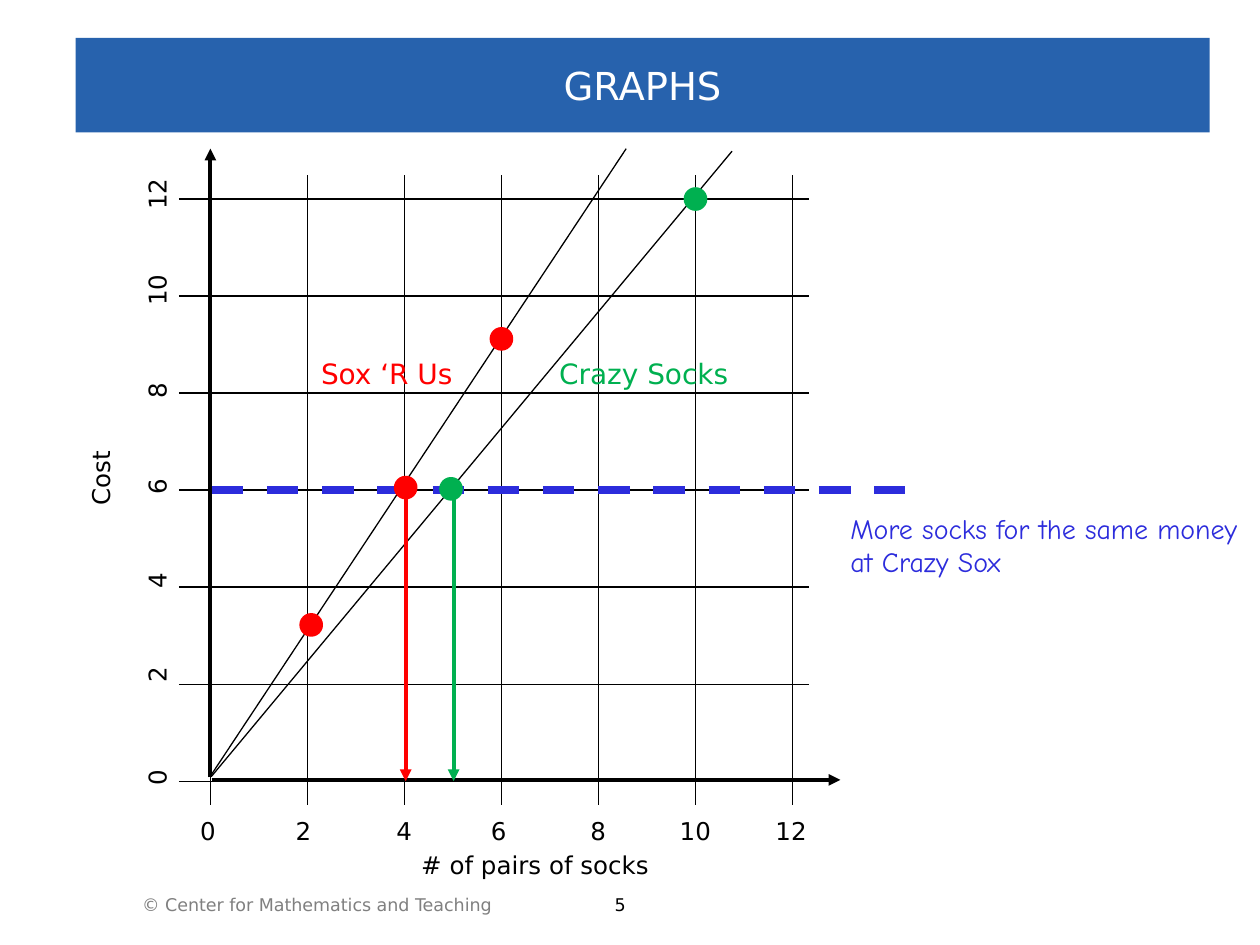
from lxml.etree import SubElement
from pptx import Presentation
from pptx.dml.color import RGBColor
from pptx.enum.dml import MSO_LINE
from pptx.enum.shapes import MSO_CONNECTOR, MSO_SHAPE
from pptx.enum.text import MSO_ANCHOR, PP_ALIGN
from pptx.oxml.ns import qn
from pptx.util import Inches, Pt

COLORS = {
    "black": "000000",
    "white": "FFFFFF",
    "gray": "808080",
    "banner": "2762AD",
    "blue": "2C2CDC",
    "red": "FF0000",
    "green": "00B050",
}
FONT = "DejaVu Sans"
STEP = 0.77           # grid spacing, two units on either axis
X0, Y0 = 1.67, 6.2    # origin of the graph
TICKS = range(0, 13, 2)
TICK_TEXT = "\t".join(str(n) for n in TICKS)


def rgb(name):
    return RGBColor.from_string(COLORS[name])


def write(tf, text, size=14, color="black", font=FONT, align=PP_ALIGN.LEFT, tabs=()):
    p = tf.paragraphs[0]
    p.alignment = align
    if tabs:
        tab_list = SubElement(p._p.get_or_add_pPr(), qn("a:tabLst"))
        for pos in tabs:
            SubElement(tab_list, qn("a:tab"), pos=str(Inches(pos)), algn="ctr")
    r = p.add_run()
    r.text = text
    r.font.size = Pt(size)
    r.font.name = font
    r.font.color.rgb = rgb(color)


def add_text(s, text, left, top, width, height, rotation=0, wrap=True, **fmt):
    sp = s.shapes.add_textbox(Inches(left), Inches(top), Inches(width), Inches(height))
    sp.rotation = rotation
    sp.text_frame.word_wrap = wrap
    write(sp.text_frame, text, **fmt)


def add_line(s, x1, y1, x2, y2, color="black", width=0.75, arrow=False, dash=None):
    c = s.shapes.add_connector(MSO_CONNECTOR.STRAIGHT, Inches(x1), Inches(y1),
                               Inches(x2), Inches(y2))
    c.line.color.rgb = rgb(color)
    c.line.width = Pt(width)
    if dash:
        c.line.dash_style = dash
    if arrow:
        SubElement(c.line._get_or_add_ln(), qn("a:tailEnd"), type="triangle")
    SubElement(c._element.spPr, qn("a:effectLst"))


def add_filled(s, shape, left, top, width, height, color):
    sp = s.shapes.add_shape(shape, Inches(left), Inches(top), Inches(width), Inches(height))
    sp.shadow.inherit = False
    sp.fill.solid()
    sp.fill.fore_color.rgb = rgb(color)
    return sp


def add_point(s, left, top, color):
    sp = add_filled(s, MSO_SHAPE.OVAL, left, top, 0.16, 0.16, color)
    sp.line.color.rgb = rgb(color)
    sp.line.width = Pt(2)


def add_title(s, text):
    sp = add_filled(s, MSO_SHAPE.RECTANGLE, 0.6, 0.3, 9, 0.75, "banner")
    sp.line.fill.background()
    sp.text_frame.vertical_anchor = MSO_ANCHOR.MIDDLE
    write(sp.text_frame, text, size=22, color="white", align=PP_ALIGN.CENTER)


def add_grid(s):
    for i in range(len(TICKS)):
        y = Y0 - i * STEP
        x = X0 + i * STEP
        # The lines at zero are only short ticks beside the axes
        add_line(s, 1.42, y, 6.42 if i else 1.92, y)
        add_line(s, x, 1.39 if i else 5.89, x, 6.39)
    add_line(s, X0, 6.17, X0, 1.18, width=2.25, arrow=True)
    add_line(s, 1.68, 6.19, 6.67, 6.19, width=2.25, arrow=True)


def add_axis_labels(s):
    add_text(s, "Cost", 0.45, 3.59, 0.7, 0.34, rotation=270)
    add_text(s, TICK_TEXT, -1.32, 3.59, 5.14, 0.34, rotation=270,
             tabs=(0.88, 1.62, 2.37, 3.13, 3.93, 4.69))
    add_text(s, TICK_TEXT, 1.49, 6.43, 5.16, 0.34,
             tabs=(0.82, 1.62, 2.37, 3.16, 3.93, 4.69))
    add_text(s, "# of pairs of socks", 3.07, 6.7, 2.18, 0.34, align=PP_ALIGN.RIGHT)


def main():
    prs = Presentation()
    prs.slide_width, prs.slide_height = Inches(10), Inches(7.5)
    s = prs.slides.add_slide(prs.slide_layouts[6])

    # Footer and title
    add_text(s, "© Center for Mathematics and Teaching", 1.03, 7.05, 3.02, 0.27,
             wrap=False, size=10, color="gray")
    add_text(s, "5", 4.78, 7.05, 0.44, 0.27, wrap=False, size=10)
    add_title(s, "GRAPHS")

    # Axes and grid
    add_axis_labels(s)
    add_grid(s)

    # Equal-cost line and the two price lines
    add_line(s, 1.68, 3.89, 7.18, 3.89, color="blue", width=4.5, dash=MSO_LINE.DASH)
    add_line(s, 1.68, 6.16, 5.81, 1.2)
    add_line(s, X0, 6.16, 4.97, 1.18)

    # Data points and store names
    for left, top, color in [(3.14, 3.79, "red"), (2.39, 4.88, "red"), (3.9, 2.61, "red"),
                             (5.44, 1.5, "green"), (3.5, 3.8, "green")]:
        add_point(s, left, top, color)
    add_text(s, "Sox ‘R Us", 2.45, 2.78, 1.6, 0.37, size=16, color="red")
    add_text(s, "Crazy Socks", 4.34, 2.78, 1.9, 0.37, size=16, color="green")

    # Pairs bought for the same cost
    for x, color in [(3.22, "red"), (3.6, "green")]:
        add_line(s, x, 3.9, x, 6.2, color=color, width=2.25, arrow=True)
    add_text(s, "More socks for the same money at Crazy Sox", 6.65, 4.01, 3.34, 0.64,
             size=16, color="blue", font="Comic Neue")

    prs.save("out.pptx")


if __name__ == "__main__":
    main()
